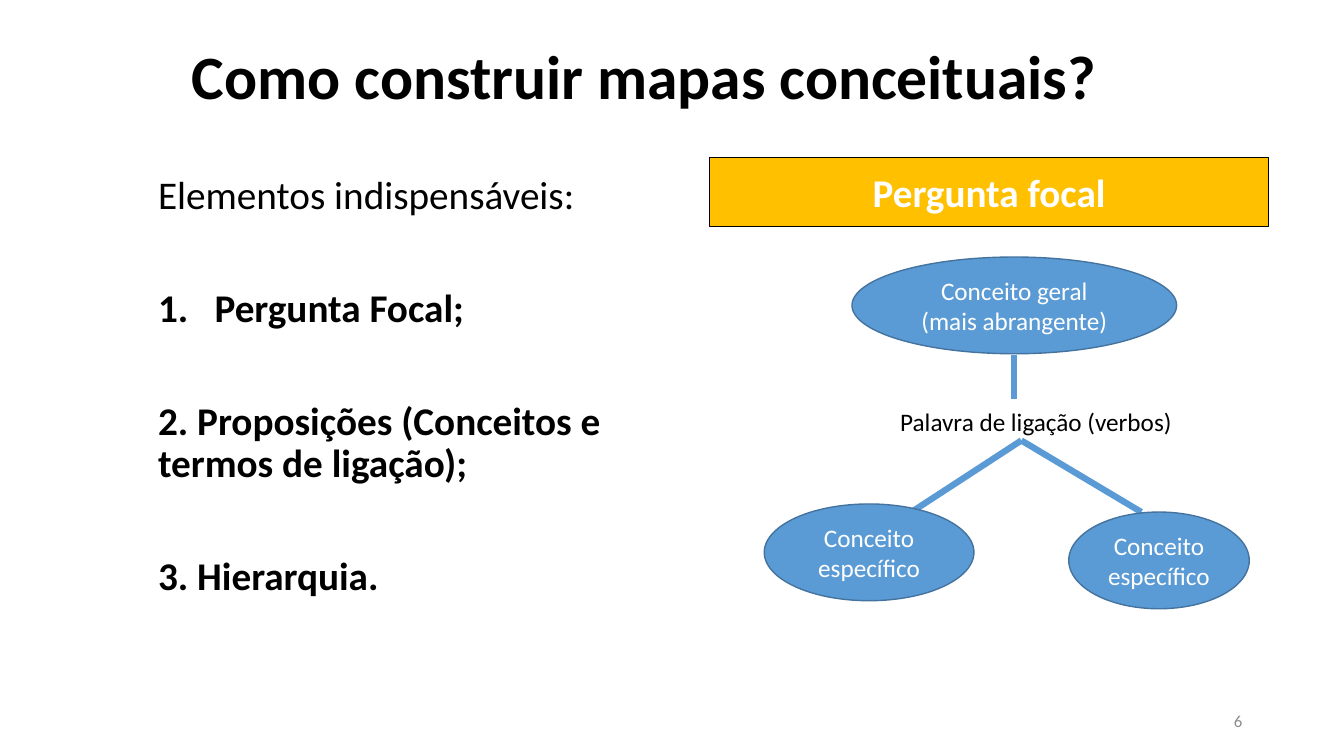
from lxml import etree
from pptx import Presentation
from pptx.dml.color import RGBColor
from pptx.enum.shapes import MSO_CONNECTOR, MSO_SHAPE
from pptx.enum.text import MSO_ANCHOR, PP_ALIGN
from pptx.oxml.ns import qn
from pptx.util import Inches, Pt

LEFT, CENTER, RIGHT = PP_ALIGN.LEFT, PP_ALIGN.CENTER, PP_ALIGN.RIGHT
TOP, MIDDLE = MSO_ANCHOR.TOP, MSO_ANCHOR.MIDDLE
RECTANGLE, OVAL = MSO_SHAPE.RECTANGLE, MSO_SHAPE.OVAL
STRAIGHT = MSO_CONNECTOR.STRAIGHT

FONT = "Calibri"
COLORS = {
    "black": "000000",
    "white": "FFFFFF",
    "gray": "8C8C8C",
    "gold": "FFC000",
    "blue": "5B9BD5",
    "blue_edge": "43739E",
}


def color(name):
    return RGBColor.from_string(COLORS[name])


def write(paragraph, text, size=18, fill="black", bold=False, align=LEFT,
          line_spacing=None, space_before=0):
    """Put formatted text into a paragraph."""
    paragraph.alignment = align
    paragraph.line_spacing = line_spacing
    paragraph.space_before = Pt(space_before)
    run = paragraph.add_run()
    run.text = text
    run.font.name = FONT
    run.font.size = Pt(size)
    run.font.bold = bold
    run.font.color.rgb = color(fill)


def write_lines(frame, lines, **text_format):
    """Write one paragraph per line."""
    for index, line in enumerate(lines):
        paragraph = frame.add_paragraph() if index else frame.paragraphs[0]
        write(paragraph, line, **text_format)


def number_paragraph(paragraph, indent):
    """Give a paragraph an automatic number with a hanging indent."""
    properties = paragraph._p.get_or_add_pPr()
    properties.set("marL", str(Inches(indent)))
    properties.set("indent", str(Inches(-indent)))
    numbering = etree.SubElement(properties, qn("a:buAutoNum"))
    numbering.set("type", "arabicPeriod")


def add_title(slide, text, left, top, width, height):
    title = slide.shapes.title
    title.left, title.top = Inches(left), Inches(top)
    title.width, title.height = Inches(width), Inches(height)
    title.text_frame.vertical_anchor = MIDDLE
    write(title.text_frame.paragraphs[0], text, size=44, bold=True,
          align=CENTER, line_spacing=0.9)


def add_text(slide, lines, left, top, width, height, wrap=True, anchor=TOP,
             **text_format):
    box = slide.shapes.add_textbox(Inches(left), Inches(top),
                                   Inches(width), Inches(height))
    frame = box.text_frame
    frame.word_wrap = wrap
    frame.vertical_anchor = anchor
    write_lines(frame, lines, **text_format)
    return frame


def add_box(slide, kind, lines, left, top, width, height, fill="blue",
            edge="blue_edge", **text_format):
    shape = slide.shapes.add_shape(kind, Inches(left), Inches(top),
                                   Inches(width), Inches(height))
    shape.shadow.inherit = False
    shape.fill.solid()
    shape.fill.fore_color.rgb = color(fill)
    shape.line.color.rgb = color(edge)
    shape.line.width = Pt(1)
    frame = shape.text_frame
    frame.word_wrap = True
    frame.vertical_anchor = MIDDLE
    write_lines(frame, lines, fill="white", align=CENTER, **text_format)


def add_link(slide, start, end):
    points = [Inches(value) for value in (*start, *end)]
    link = slide.shapes.add_connector(STRAIGHT, *points)
    link.line.color.rgb = color("blue")
    link.line.width = Pt(4.5)
    etree.SubElement(link._element.spPr, qn("a:effectLst"))


def add_elements_list(slide):
    frame = add_text(slide, ["Elementos indispensáveis:"], 1.47, 1.69, 4.93, 5.66,
                     size=28, line_spacing=0.9, space_before=10)
    items = ["Pergunta Focal;",
             "2. Proposições (Conceitos e termos de ligação);",
             "3. Hierarquia."]
    for item in items:
        write(frame.add_paragraph(), item, size=28, bold=True,
              line_spacing=0.9, space_before=50.5)
    number_paragraph(frame.paragraphs[1], 0.56)


def add_concept_map(slide):
    # Focal question and general concept
    add_box(slide, RECTANGLE, ["Pergunta focal"], 7.04, 1.56, 5.54, 0.69,
            fill="gold", edge="black", size=28, bold=True)
    add_box(slide, OVAL, ["Conceito geral", "(mais abrangente)"],
            8.45, 2.55, 3.22, 0.96)

    # Links, drawn behind the specific concepts
    add_link(slide, (10.06, 3.52), (10.06, 3.96))
    fork = (10.13, 4.37)
    for link_end in (9.04, 11.32):
        add_link(slide, fork, (link_end, 5.08))

    # Specific concepts and linking words
    for left, top, width in ((7.58, 5, 2.08), (10.6, 5.08, 1.79)):
        add_box(slide, OVAL, ["Conceito específico"], left, top, width, 0.96)
    add_text(slide, ["Palavra de ligação (verbos)"], 8.83, 3.98, 2.91, 0.4,
             wrap=False)


def main():
    presentation = Presentation()
    presentation.slide_width = Inches(13.33)
    presentation.slide_height = Inches(7.5)
    slide = presentation.slides.add_slide(presentation.slide_layouts[5])

    add_title(slide, "Como construir mapas conceituais?", 0.37, 0.4, 12.05, 0.77)
    add_elements_list(slide)
    add_concept_map(slide)

    # Slide number
    add_text(slide, ["6"], 9.42, 6.95, 3, 0.4, anchor=MIDDLE,
             size=12, fill="gray", align=RIGHT)

    presentation.save("out.pptx")


if __name__ == "__main__":
    main()
